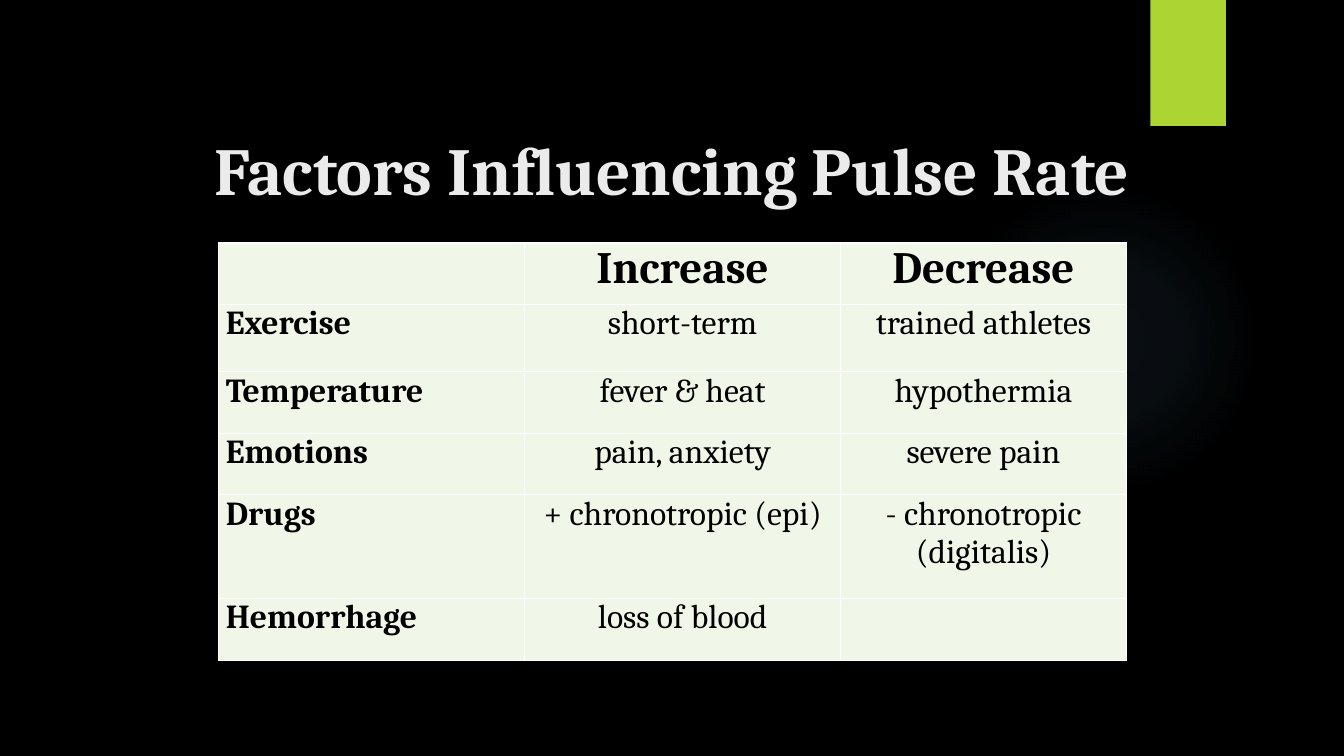
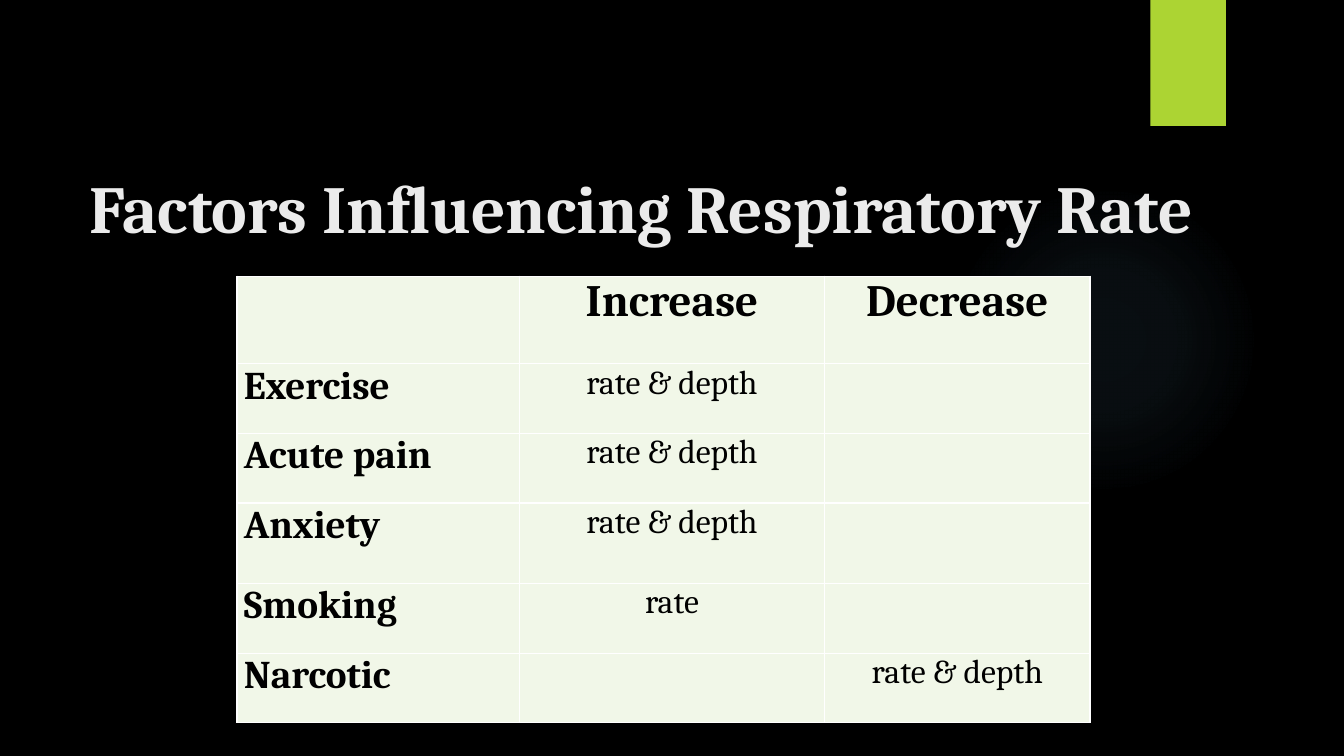
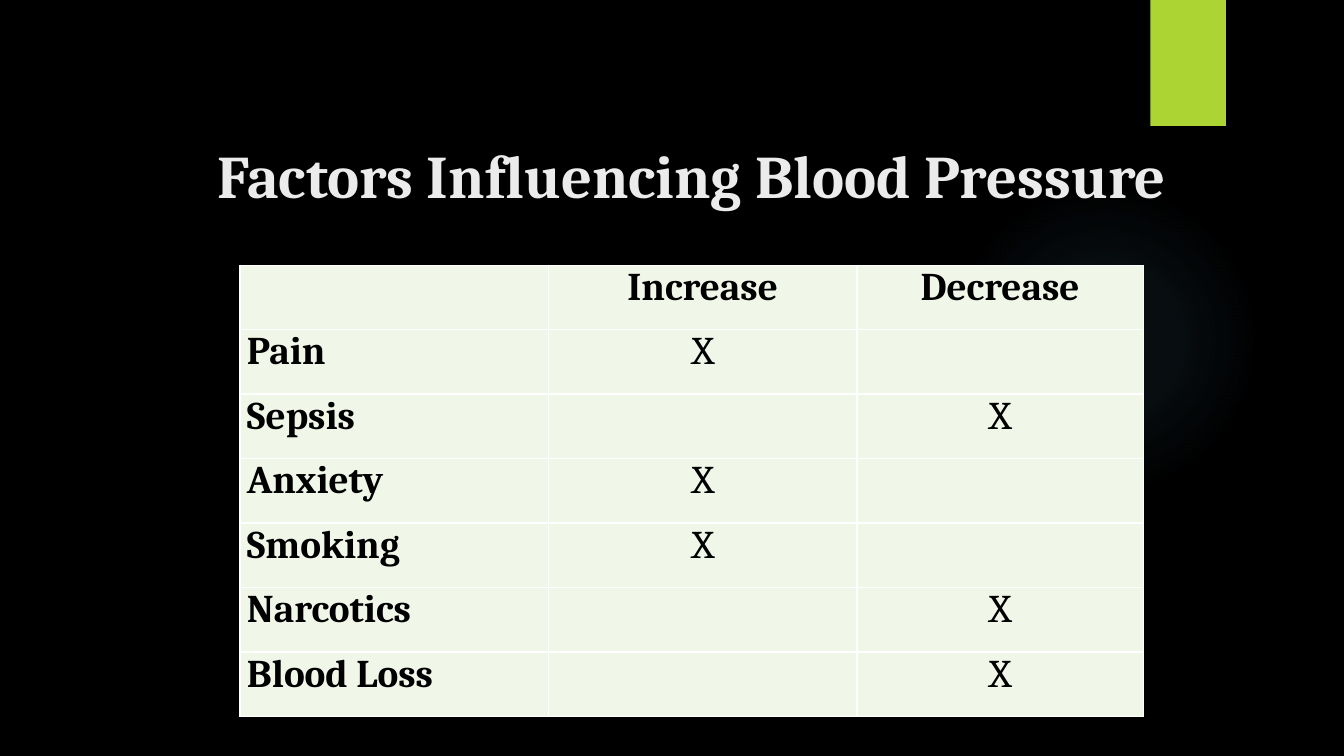
import pptx
import pptx.dml.color
import pptx.enum.shapes
import pptx.enum.text
import pptx.oxml
import pptx.oxml.ns
import pptx.util
from dataclasses import dataclass

Inches = pptx.util.Inches
Align = pptx.enum.text.PP_ALIGN
Anchor = pptx.enum.text.MSO_ANCHOR
Shape = pptx.enum.shapes.MSO_SHAPE


@dataclass(frozen=True)
class Theme:
    font: str = "Cambria"
    background: str = "000000"
    glow: str = "7AC4F0"
    accent: str = "ACD433"
    title: str = "EBEBEB"
    cell: str = "F1F7E8"
    text: str = "000000"
    border: str = "FFFFFF"
    border_width: float = 1
    large: float = 48
    title_compact: float = 43.2
    heading: float = 32
    medium: float = 28
    small: float = 24


THEME = Theme()
GLOW_STOPS = [(0, 7), (36, 6), (69, 0)]
HEADINGS = ("", "Increase", "Decrease")

SLIDES = [
    {
        "title": "Factors Influencing Pulse Rate",
        "title_box": (1.53, 1.13, 10.27, 1.09),
        "title_size": THEME.large,
        "title_align": Align.CENTER,
        "table_at": (2.17, 2.41),
        "columns": (3.03, 3.14, 2.83),
        "heights": (0.61, 0.67, 0.61, 0.61, 1.03, 0.61),
        "sizes": (THEME.heading, THEME.small, THEME.small),
        "rows": [
            ("Exercise", "short-term", "trained athletes"),
            ("Temperature", "fever & heat", "hypothermia"),
            ("Emotions", "pain, anxiety", "severe pain"),
            ("Drugs", "+ chronotropic (epi)", "- chronotropic (digitalis)"),
            ("Hemorrhage", "loss of blood", ""),
        ],
    },
    {
        "title": "Factors Influencing Respiratory Rate",
        "title_box": (0.79, 1.5, 11.59, 1.09),
        "title_size": THEME.large,
        "title_align": Align.LEFT,
        "table_at": (2.35, 2.74),
        "columns": (2.8, 3.03, 2.63),
        "heights": (0.87, 0.69, 0.69, 0.8, 0.69, 0.69),
        "sizes": (THEME.heading, THEME.medium, THEME.small),
        "rows": [
            ("Exercise", "rate & depth", ""),
            ("Acute pain", "rate & depth", ""),
            ("Anxiety", "rate & depth", ""),
            ("Smoking", "rate", ""),
            ("Narcotic", "", "rate & depth"),
        ],
    },
    {
        "title": "Factors Influencing Blood Pressure",
        "title_box": (1.53, 1.22, 10.66, 1.02),
        "title_size": THEME.title_compact,
        "title_align": Align.CENTER,
        "table_at": (2.38, 2.63),
        "columns": (3.06, 3.06, 2.84),
        "heights": (0.64,) * 7,
        "sizes": (THEME.medium, THEME.medium, THEME.medium),
        "rows": [
            ("Pain", "X", ""),
            ("Sepsis", "", "X"),
            ("Anxiety", "X", ""),
            ("Smoking", "X", ""),
            ("Narcotics", "", "X"),
            ("Blood Loss", "", "X"),
        ],
    },
]


def rgb(value):
    return pptx.dml.color.RGBColor.from_string(value)


def write(frame, text, *, size, color, bold=False, align=Align.LEFT):
    para = frame.paragraphs[0]
    para.alignment = align
    span = para.add_run()
    span.text = text
    span.font.name = THEME.font
    span.font.size = pptx.util.Pt(size)
    span.font.bold = bold
    span.font.color.rgb = rgb(color)


def add_plain_shape(page, kind, left, top, width, height):
    shape = page.shapes.add_shape(
        kind, Inches(left), Inches(top), Inches(width), Inches(height))
    shape.shadow.inherit = False
    shape.line.fill.background()
    return shape


def add_backdrop(page):
    glow = add_plain_shape(page, Shape.OVAL, 9.41, 1.83, 3.08, 3.08)
    glow.fill.background()
    stops = "".join(
        f'<a:gs pos="{position * 1000}"><a:srgbClr val="{THEME.glow}">'
        f'<a:alpha val="{alpha * 1000}"/></a:srgbClr></a:gs>'
        for position, alpha in GLOW_STOPS)
    gradient = pptx.oxml.parse_xml(
        f'<a:gradFill {pptx.oxml.ns.nsdecls("a")} rotWithShape="1">'
        f'<a:gsLst>{stops}</a:gsLst><a:path path="circle">'
        '<a:fillToRect l="50000" t="50000" r="50000" b="50000"/>'
        '</a:path></a:gradFill>')
    properties = glow._element.spPr
    properties.replace(properties.find(pptx.oxml.ns.qn("a:noFill")), gradient)

    tab = add_plain_shape(page, Shape.RECTANGLE, 11.41, 0, 0.75, 1.25)
    tab.fill.solid()
    tab.fill.fore_color.rgb = rgb(THEME.accent)


def add_title(page, content):
    box = page.shapes.add_textbox(*map(Inches, content["title_box"]))
    box.text_frame.word_wrap = True
    box.text_frame.vertical_anchor = Anchor.MIDDLE
    write(box.text_frame, content["title"], size=content["title_size"],
          color=THEME.title, bold=True, align=content["title_align"])


def style_cell(cell):
    cell.margin_left = cell.margin_right = Inches(0.07)
    cell.margin_top = cell.margin_bottom = 0
    cell.fill.solid()
    cell.fill.fore_color.rgb = rgb(THEME.cell)
    properties = cell._tc.get_or_add_tcPr()
    for index, side in enumerate(("lnL", "lnR", "lnT", "lnB")):
        properties.insert(index, pptx.oxml.parse_xml(
            f'<a:{side} {pptx.oxml.ns.nsdecls("a")} '
            f'w="{pptx.util.Pt(THEME.border_width)}"><a:solidFill>'
            f'<a:srgbClr val="{THEME.border}"/></a:solidFill></a:{side}>'))


def add_factor_table(page, content):
    rows = [HEADINGS] + content["rows"]
    columns, heights = content["columns"], content["heights"]
    heading_size, label_size, value_size = content["sizes"]
    left, top = content["table_at"]
    table = page.shapes.add_table(
        len(rows), len(columns), Inches(left), Inches(top),
        Inches(sum(columns)), Inches(sum(heights))).table
    table.first_row = False
    table.horz_banding = False
    for column, width in zip(table.columns, columns):
        column.width = Inches(width)
    for row_index, texts in enumerate(rows):
        table.rows[row_index].height = Inches(heights[row_index])
        for column_index, text in enumerate(texts):
            cell = table.cell(row_index, column_index)
            style_cell(cell)
            if not text:
                continue
            is_heading, is_label = row_index == 0, column_index == 0
            size = (heading_size if is_heading
                    else label_size if is_label else value_size)
            write(cell.text_frame, text, size=size, color=THEME.text,
                  bold=is_heading or is_label,
                  align=Align.LEFT if is_label else Align.CENTER)


def main():
    deck = pptx.Presentation()
    deck.slide_width, deck.slide_height = Inches(13.33), Inches(7.5)
    backdrop = deck.slide_master.background.fill
    backdrop.solid()
    backdrop.fore_color.rgb = rgb(THEME.background)
    for content in SLIDES:
        page = deck.slides.add_slide(deck.slide_layouts[6])
        add_backdrop(page)
        add_title(page, content)
        add_factor_table(page, content)
    deck.save("out.pptx")


if __name__ == "__main__":
    main()
